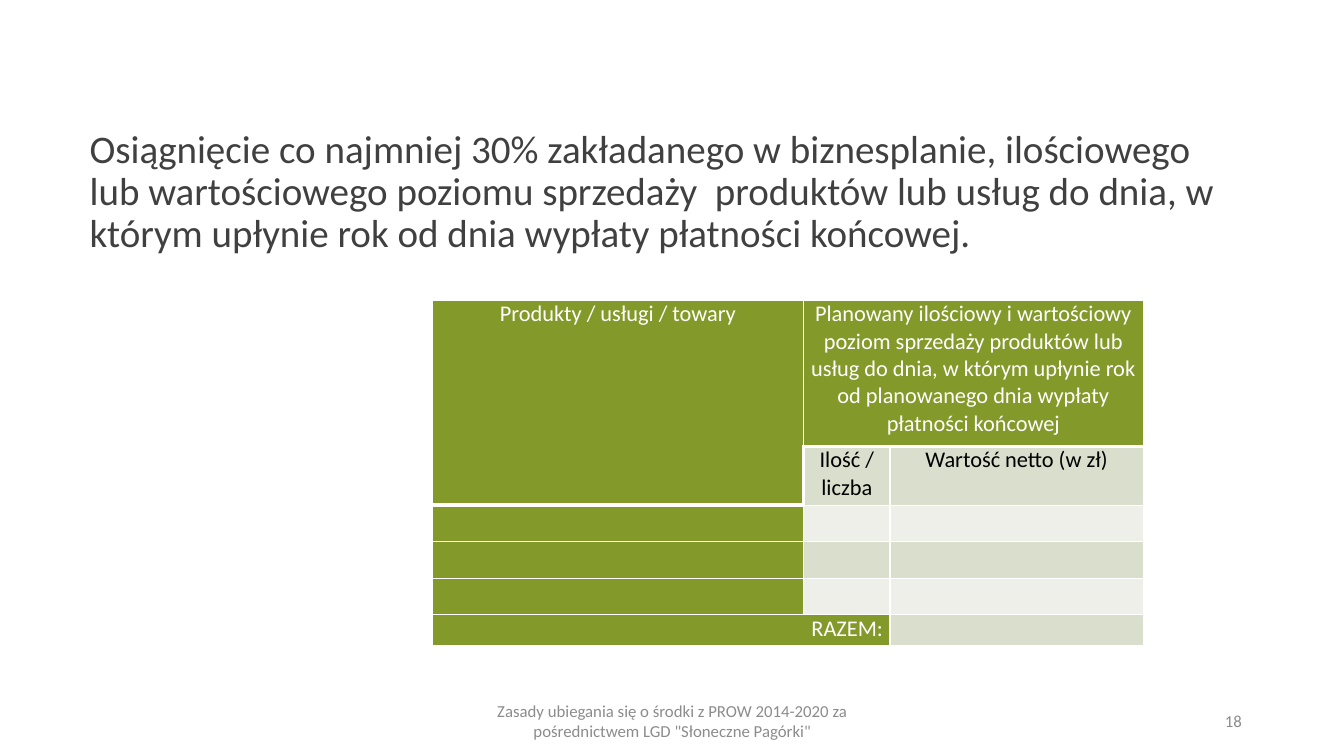
from lxml import etree
from pptx import Presentation
from pptx import util as u
from pptx.dml.color import RGBColor
from pptx.enum import text
from pptx.oxml import ns

FONT = "Calibri"
GREEN, BAND_DARK, BAND_LIGHT = "83992A", "D9DECD", "EDEFE8"
WHITE, BLACK, DARK_GREY, GREY = "FFFFFF", "000000", "404040", "8C8C8C"
LEFT, CENTER, RIGHT = text.PP_ALIGN.LEFT, text.PP_ALIGN.CENTER, text.PP_ALIGN.RIGHT


def rgb(hex_string):
    return RGBColor.from_string(hex_string)


def write(frame, words, size, color, align):
    paragraph = frame.paragraphs[0]
    paragraph.alignment = align
    run = paragraph.add_run()
    run.text = words
    run.font.name = FONT
    run.font.size = u.Pt(size)
    run.font.color.rgb = rgb(color)


def add_text(slide, box, words, size, color, align, anchor=text.MSO_ANCHOR.MIDDLE):
    frame = slide.shapes.add_textbox(*map(u.Cm, box)).text_frame
    frame.word_wrap = True
    frame.vertical_anchor = anchor
    write(frame, words, size, color, align)
    return frame


def set_borders(cell, widths):
    """Draw white cell borders; widths maps L, R, T, B to points."""
    properties = cell._tc.get_or_add_tcPr()
    for index, side in enumerate("LRTB"):
        line = etree.Element(ns.qn(f"a:ln{side}"), w=str(u.Pt(widths.get(side, 1))))
        fill = etree.SubElement(line, ns.qn("a:solidFill"))
        etree.SubElement(fill, ns.qn("a:srgbClr"), val=WHITE)
        properties.insert(index, line)


def add_heading(slide, box):
    frame = add_text(
        slide, box,
        "Osiągnięcie co najmniej 30% zakładanego w biznesplanie, ilościowego "
        "lub wartościowego poziomu sprzedaży  produktów lub usług do dnia, "
        "w którym upłynie rok od dnia wypłaty płatności końcowej.",
        27.9, DARK_GREY, LEFT, text.MSO_ANCHOR.TOP)
    frame.margin_top = u.Cm(0.45)
    frame.paragraphs[0].line_spacing = 0.9


def add_sales_table(slide, box):
    column_widths = [9.35, 2.18, 6.38]
    row_heights = [3.68, 1.48, 0.92, 0.92, 0.92, 0.74]
    last = len(row_heights) - 1
    sales = slide.shapes.add_table(
        len(row_heights), len(column_widths), *map(u.Cm, box)).table
    for column, width in zip(sales.columns, column_widths):
        column.width = u.Cm(width)
    for row, height in zip(sales.rows, row_heights):
        row.height = u.Cm(height)

    # Fills and borders: green headers, banded values
    for r in range(len(row_heights)):
        for c in range(len(column_widths)):
            cell = sales.cell(r, c)
            cell.margin_left = cell.margin_right = u.Cm(0.18)
            cell.margin_top = cell.margin_bottom = 0
            header = r == 0 or c == 0 or (r == last and c == 1)
            band = BAND_DARK if r % 2 else BAND_LIGHT
            cell.fill.solid()
            cell.fill.fore_color.rgb = rgb(GREEN if header else band)
            widths = {}
            if r == 0 or (r, c) == (1, 0):
                widths["B"] = 3
            if (r == 1 and c > 0) or (r, c) == (2, 0):
                widths["T"] = 3
            if (r, c) == (1, 0):
                widths["R"] = 3
            if (r, c) == (1, 1):
                widths["L"] = 3
            set_borders(cell, widths)

    # Merged headers and total
    for start, end in [((0, 0), (1, 0)), ((0, 1), (0, 2)), ((last, 0), (last, 1))]:
        sales.cell(*start).merge(sales.cell(*end))

    # Labels
    labels = [
        (0, 0, "Produkty / usługi / towary", WHITE, CENTER),
        (0, 1, "Planowany ilościowy i wartościowy poziom sprzedaży produktów lub "
               "usług do dnia, w którym upłynie rok od planowanego dnia wypłaty "
               "płatności końcowej", WHITE, CENTER),
        (1, 1, "Ilość / liczba", BLACK, CENTER),
        (1, 2, "Wartość netto (w zł)", BLACK, CENTER),
        (last, 0, "RAZEM:", WHITE, RIGHT),
    ]
    for r, c, words, color, align in labels:
        write(sales.cell(r, c).text_frame, words, 16, color, align)


def add_footer(slide, box):
    left, top, width, height = box
    number_width = 7.62
    add_text(slide, (left, top, 11.43, height),
             "Zasady ubiegania się o środki z PROW 2014-2020 za "
             'pośrednictwem LGD "Słoneczne Pagórki"', 12, GREY, CENTER)
    add_text(slide, (left + width - number_width, top, number_width, height),
             "18", 12, GREY, RIGHT)


def main():
    deck = Presentation()
    deck.slide_width, deck.slide_height = u.Cm(33.87), u.Cm(19.05)
    slide = deck.slides.add_slide(deck.slide_layouts[6])
    add_sales_table(slide, (10.9, 7.57, 17.91, 8.66))
    add_heading(slide, (2.01, 2.82, 29.21, 5.77))
    add_footer(slide, (11.23, 17.65, 20.32, 1.02))
    deck.save("out.pptx")


if __name__ == "__main__":
    main()
